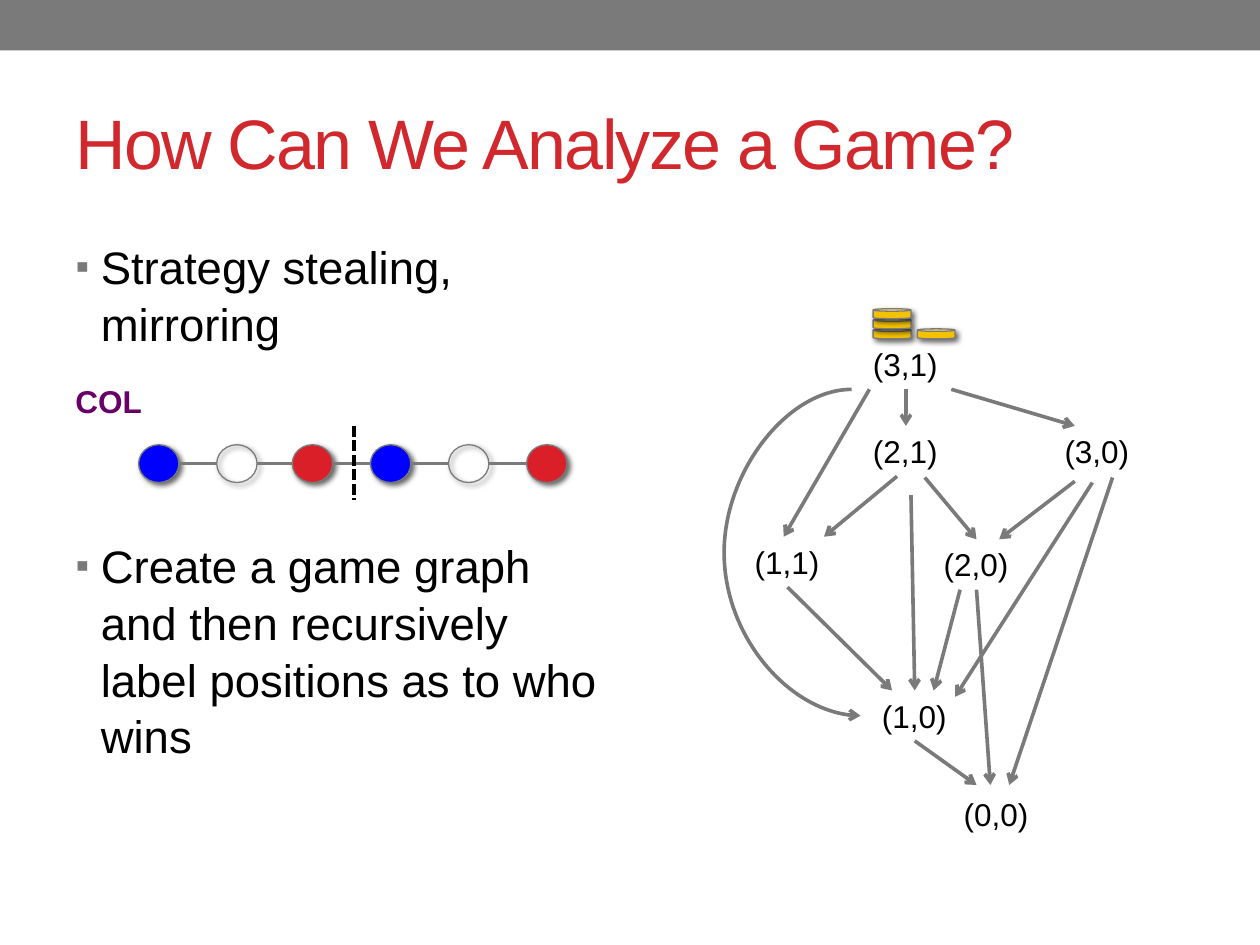
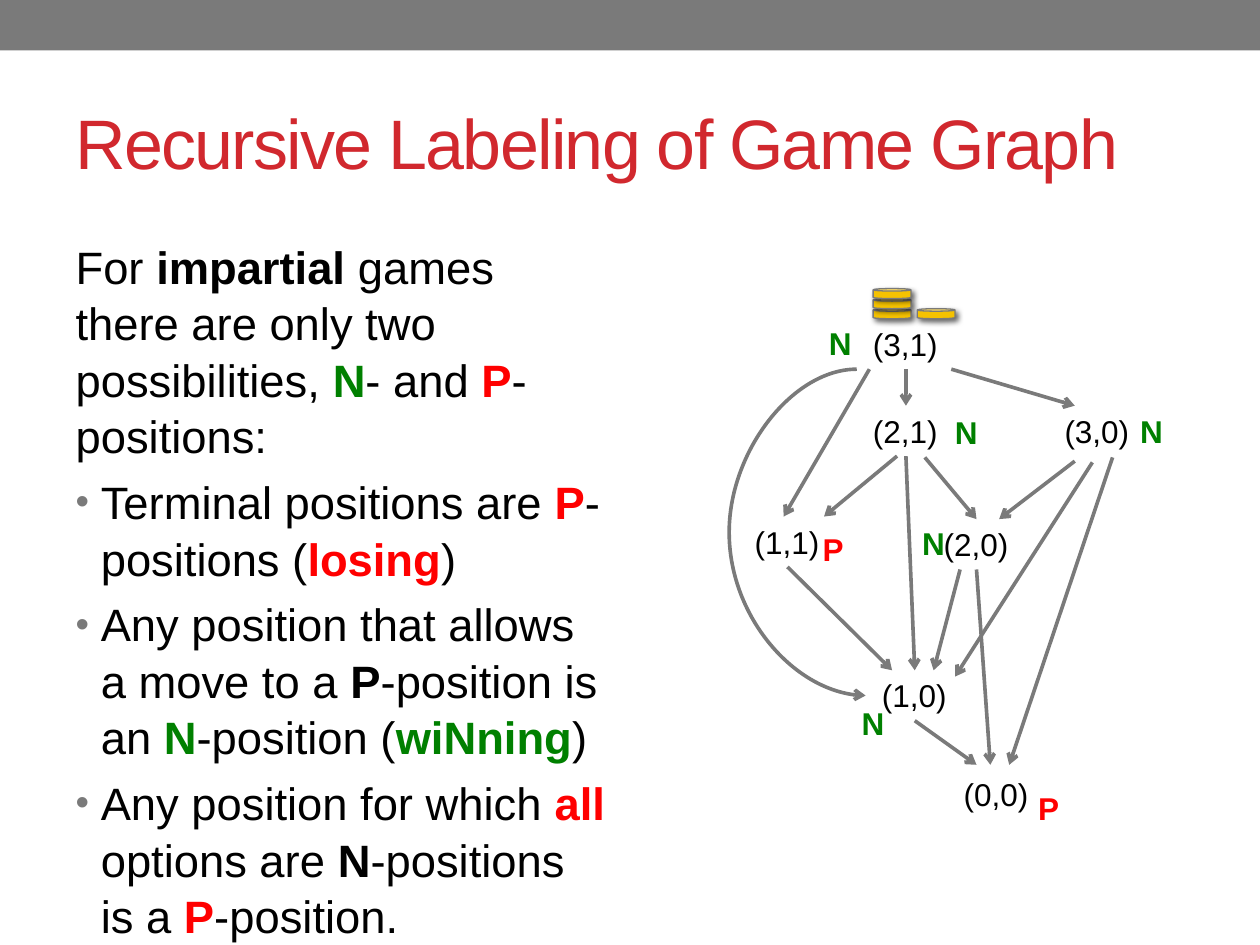
from lxml import etree
from pptx import Presentation
from pptx.dml.color import RGBColor
from pptx.enum.dml import MSO_LINE_DASH_STYLE as DASH
from pptx.enum.shapes import MSO_CONNECTOR as CXN, MSO_SHAPE as SHAPE
from pptx.enum.text import MSO_ANCHOR, MSO_AUTO_SIZE, PP_ALIGN
from pptx.oxml.ns import qn
from pptx.util import Inches, Pt

COLORS = {
    "gray": "7A7A7A", "title": "D1282E", "text": "000000", "purple": "660066",
    "N": "008000", "P": "FF0000", "coin": "F5C201", "red": "DA1F28", "blue": "0000FF",
}
FONT = "Arial"
TOP, BOTTOM = 0, 2
LABEL_W, LABEL_H = 0.72, 0.4

# Game positions: left and top of each label
POSITIONS = {
    "(3,1)": (6.83, 2.69), "(2,1)": (6.83, 3.38), "(3,0)": (8.35, 3.38),
    "(1,1)": (5.89, 4.26), "(2,0)": (7.39, 4.28), "(1,0)": (6.9, 5.48),
    "(0,0)": (7.55, 6.26),
}
# Moves: a name joins the label's bottom (start) or top (end)
MOVES = [
    ("(3,1)", "(2,1)"), ((7.55, 3.09), (8.53, 3.38)), ((6.9, 3.09), (6.22, 4.26)),
    ("(1,1)", (7.08, 5.48)), ((7.62, 4.68), (7.41, 5.48)), ((7.34, 3.79), "(2,0)"),
    ((7.12, 3.78), (6.54, 4.26)), ("(1,0)", (7.75, 6.23)), ("(2,0)", (7.86, 6.23)),
    ((8.53, 3.82), (7.93, 4.28)), ((8.83, 3.79), (8.01, 6.23)), ((8.67, 3.83), (7.58, 5.53)),
]


def rgb(name):
    return RGBColor.from_string(COLORS[name])


def add_xml(parent, tag, **attrs):
    return etree.SubElement(parent, qn(tag), attrs)


def set_font(font, size, color, bold=None):
    font.name, font.size, font.bold = FONT, Pt(size), bold
    font.color.rgb = rgb(color)


def add_solid(s, kind, x, y, w, h, fill=None, outlined=True, shadow=True):
    sp = s.shapes.add_shape(kind, Inches(x), Inches(y), Inches(w), Inches(h))
    sp.shadow.inherit = False
    if fill:
        sp.fill.solid()
        sp.fill.fore_color.rgb = rgb(fill)
    else:
        sp.fill.background()
    if outlined:
        sp.line.color.rgb = rgb("gray")
        sp.line.width = Pt(0.75)
    else:
        sp.line.fill.background()
    if shadow:
        effects = sp._element.spPr.find(qn("a:effectLst"))
        shade = add_xml(effects, "a:outerShdw", blurRad="38100", dist="25400",
                        dir="2700000", rotWithShape="0")
        add_xml(add_xml(shade, "a:srgbClr", val=COLORS["text"]), "a:alpha", val="60000")
    return sp


def add_line(s, start, end, color="gray", arrow=False, kind=CXN.STRAIGHT):
    c = s.shapes.add_connector(kind, *[Inches(v) for v in (*start, *end)])
    c.line.color.rgb = rgb(color)
    c.line.width = Pt(2.08)
    if arrow:
        add_xml(c.line._get_or_add_ln(), "a:tailEnd", type="arrow")
    add_xml(c._element.spPr, "a:effectLst")
    return c


def add_label(s, text, x, y, w=LABEL_W, color="text", bold=False):
    sp = s.shapes.add_textbox(Inches(x), Inches(y), Inches(w), Inches(LABEL_H))
    tf = sp.text_frame
    tf.word_wrap = False
    tf.auto_size = MSO_AUTO_SIZE.SHAPE_TO_FIT_TEXT
    p = tf.paragraphs[0]
    p.text = text
    set_font(p.font, 18, color, bold)
    return sp


def place(sp, x, y, w, h):
    sp.left, sp.top, sp.width, sp.height = [Inches(v) for v in (x, y, w, h)]
    sp.text_frame.auto_size = MSO_AUTO_SIZE.NONE
    return sp.text_frame


def add_slide(prs, title):
    s = prs.slides.add_slide(prs.slide_layouts[1])
    add_solid(s, SHAPE.RECTANGLE, 0, 0, 10, 0.4, "gray", outlined=False, shadow=False)
    tf = place(s.shapes.title, 0.5, 0.58, 9, 1.08)
    tf.vertical_anchor = MSO_ANCHOR.MIDDLE
    p = tf.paragraphs[0]
    p.alignment = PP_ALIGN.LEFT
    r = p.add_run()
    r.text = title
    set_font(p.font, 40, "title")
    r._r.get_or_add_rPr().set("spc", "-100")
    return s


def set_bullet(p, char):
    pPr = p._p.get_or_add_pPr()
    indent = Inches(0.2) if char else 0
    pPr.set("marL", str(indent))
    pPr.set("indent", str(-indent))
    if not char:
        add_xml(pPr, "a:buNone")
        return
    add_xml(add_xml(pPr, "a:buClr"), "a:srgbClr", val=COLORS["gray"])
    add_xml(pPr, "a:buSzPct", val="85000")
    add_xml(pPr, "a:buFont", typeface=FONT)
    add_xml(pPr, "a:buChar", char=char)


def fill_body(s, size, paragraphs):
    """Each paragraph is (bullet, space before, runs); a (text, colour) run is bold."""
    tf = place(s.placeholders[1], 0.5, 1.83, 4.42, 5.16)
    for i, (char, before, runs) in enumerate(paragraphs):
        p = tf.add_paragraph() if i else tf.paragraphs[0]
        set_bullet(p, char)
        p.line_spacing = 1.04
        p.space_before = Pt(before)
        set_font(p.font, size, "text")
        for run in runs:
            text, color = (run, None) if isinstance(run, str) else run
            r = p.add_run()
            r.text = text
            if color:
                r.font.bold = True
                r.font.color.rgb = rgb(color)


def add_coins(s, dy):
    for x, y in [(6.93, 2.61), (6.93, 2.53), (6.93, 2.45), (7.28, 2.61)]:
        add_solid(s, SHAPE.CAN, x, y + dy, 0.3, 0.08, "coin")


def add_game_graph(s, dy, long_move, curve_x):
    labels = {name: add_label(s, name, x, y + dy) for name, (x, y) in POSITIONS.items()}

    def shifted(end):
        return (0, 0) if isinstance(end, str) else (end[0], end[1] + dy)

    for start, end in [*MOVES, long_move]:
        c = add_line(s, shifted(start), shifted(end), arrow=True)
        if isinstance(start, str):
            c.begin_connect(labels[start], BOTTOM)
        if isinstance(end, str):
            c.end_connect(labels[end], TOP)

    # Curved move from (3,1) to (1,0)
    c = add_line(s, (curve_x, 3.09 + dy), (curve_x + 0.07, 5.68 + dy),
                 arrow=True, kind=CXN.CURVE)
    guides = c._element.spPr.find(qn("a:prstGeom")).get_or_add_avLst()
    add_xml(guides, "a:gd", name="adj1", fmla="val -1445300")
    add_coins(s, dy)


def add_col_game(s):
    size, y = 0.32, 3.53
    nodes = [(1.1, "blue"), (1.72, None), (2.32, "red"),
             (2.94, "blue"), (3.56, None), (4.18, "red")]
    for x, fill in nodes:
        add_solid(s, SHAPE.OVAL, x, y, size, 0.3, fill)
    for (x1, _), (x2, _) in zip(nodes, nodes[1:]):
        add_line(s, (x1 + size, y + 0.15), (x2, y + 0.15))
    mirror = add_line(s, (2.81, 3.38), (2.81, 3.97), "text")
    mirror.line.dash_style = DASH.SQUARE_DOT
    add_label(s, "COL", 0.5, 2.98, 0.73, "purple", True)


def build_analysis(prs):
    s = add_slide(prs, "How Can We Analyze a Game?")
    fill_body(s, 26, [
        ("▪", 5.2, ["Strategy stealing, mirroring"]),
        ("▪", 106, ["Create a game graph and then recursively label positions as to who wins"]),
    ])
    add_game_graph(s, 0, ((7.23, 3.93), "(1,0)"), 6.76)
    add_col_game(s)


def build_labeling(prs):
    s = add_slide(prs, "Recursive Labeling of Game Graph")
    n, p = ("N", "N"), ("P", "P")
    fill_body(s, 25.9, [
        (None, 5.2, ["For ", ("impartial ", "text"), "games there are only two possibilities, ",
                     n, "- and ", p, "-positions:"]),
        ("•", 5.2, ["Terminal positions are ", p, "-positions (", ("losing", "P"), ")"]),
        ("•", 5.2, ["Any position that allows a move to a ", ("P", "text"),
                    "-position is an ", n, "-position (", ("wiNning", "N"), ")"]),
        ("•", 5.2, ["Any position for which ", ("all", "P"), " options are ", ("N", "text"),
                    "-positions is a ", p, "-position."]),
    ])
    add_game_graph(s, -0.16, ("(2,1)", "(1,0)"), 6.8)
    # Outcome of each position
    for outcome, x, y in [("P", 8.14, 6.21), ("N", 8.95, 3.22), ("N", 6.74, 5.54),
                          ("N", 7.22, 4.11), ("P", 6.43, 4.16), ("N", 6.48, 2.52),
                          ("N", 7.48, 3.23)]:
        add_label(s, outcome, x, y, 0.38, outcome, True)


def main():
    prs = Presentation()
    prs.slide_width, prs.slide_height = Inches(10), Inches(7.5)
    build_analysis(prs)
    build_labeling(prs)
    prs.save("out.pptx")


if __name__ == "__main__":
    main()
